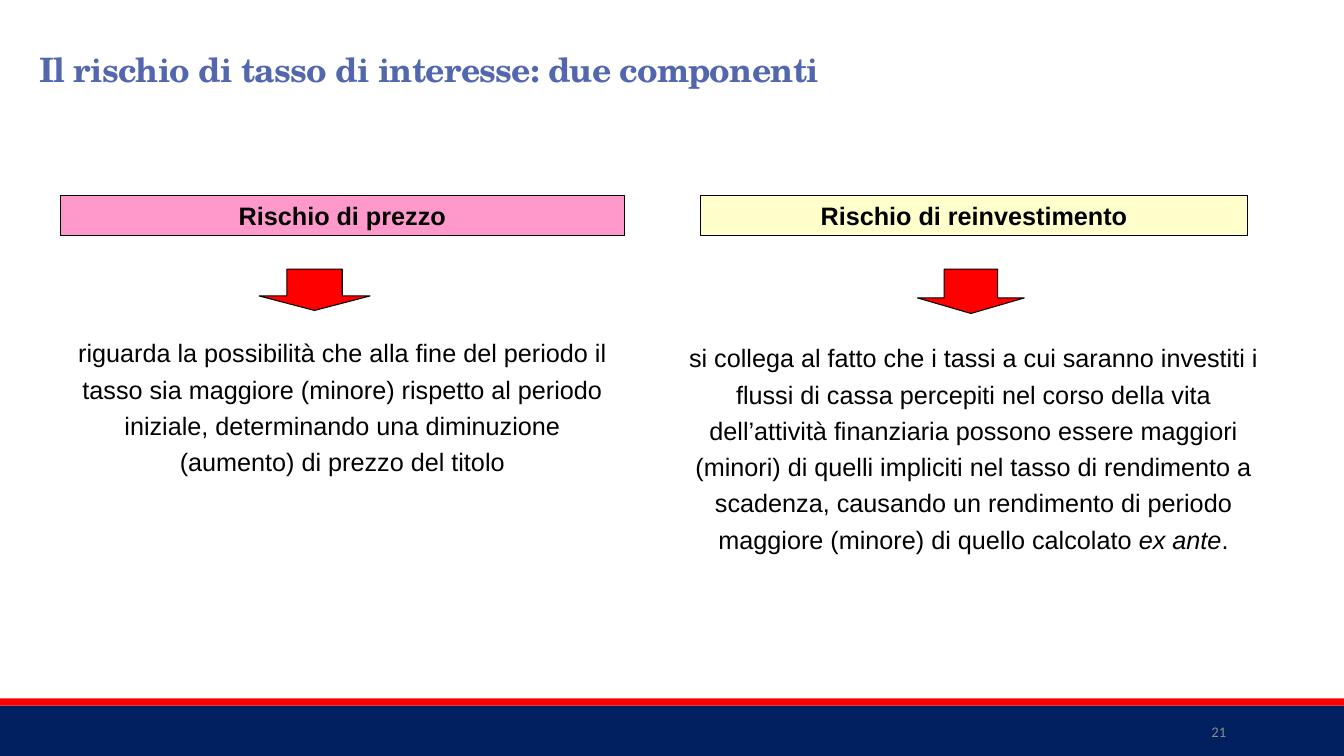
from dataclasses import dataclass

from pptx import Presentation
from pptx import util as u
from pptx.dml import color
from pptx.enum import shapes, text

COLORS = {
    "navy": "002060",
    "red": "FF0000",
    "title": "5267AE",
    "number": "8C8C8C",
    "black": "000000",
    "pink": "FF99CC",
    "cream": "FFFFCC",
}


@dataclass(frozen=True)
class Box:
    left: float
    top: float
    width: float
    height: float

    def lengths(self) -> list[u.Length]:
        return [u.Inches(value) for value in (self.left, self.top, self.width, self.height)]


@dataclass(frozen=True)
class Style:
    font: str = "Arial"
    size: float = 18
    color: str = "black"
    bold: bool = False
    align: text.PP_ALIGN = text.PP_ALIGN.CENTER
    spacing: float = 1.0
    anchor: text.MSO_ANCHOR = text.MSO_ANCHOR.TOP


@dataclass(frozen=True)
class Component:
    heading: str
    fill: str
    heading_box: Box
    arrow_box: Box
    description: str
    description_box: Box
    italic: str = ""
    ending: str = ""


TITLE = Style("TeX Gyre Schola", 24, "title", True, text.PP_ALIGN.LEFT, 0.85)
NUMBER = Style("Calibri", 10.5, "number", align=text.PP_ALIGN.RIGHT, anchor=text.MSO_ANCHOR.MIDDLE)
HEADING = Style(bold=True)
DESCRIPTION = Style(spacing=1.2)

COMPONENTS = [
    Component(
        "Rischio di prezzo",
        "pink",
        Box(0.6, 1.94, 5.59, 0.4),
        Box(2.57, 2.67, 1.1, 0.41),
        "riguarda la possibilità che alla fine del periodo il tasso sia maggiore (minore) "
        "rispetto al periodo iniziale, determinando una diminuzione (aumento) di prezzo del titolo",
        Box(0.6, 3.24, 5.59, 3.01),
    ),
    Component(
        "Rischio di reinvestimento",
        "cream",
        Box(6.95, 1.94, 5.42, 0.4),
        Box(9.1, 2.67, 1.06, 0.44),
        "si collega al fatto che i tassi a cui saranno investiti i flussi di cassa percepiti "
        "nel corso della vita dell’attività finanziaria possono essere maggiori (minori) di "
        "quelli impliciti nel tasso di rendimento a scadenza, causando un rendimento di "
        "periodo maggiore (minore) di quello calcolato ",
        Box(6.68, 3.29, 5.95, 3.01),
        "ex ante",
        ".",
    ),
]


def rgb(name: str) -> color.RGBColor:
    return color.RGBColor.from_string(COLORS[name])


def write(shape, content: str, style: Style):
    frame = shape.text_frame
    frame.word_wrap = True
    frame.vertical_anchor = style.anchor
    paragraph = frame.paragraphs[0]
    paragraph.alignment = style.align
    paragraph.line_spacing = style.spacing
    paragraph.font.name = style.font
    paragraph.font.size = u.Pt(style.size)
    paragraph.font.bold = style.bold
    paragraph.font.color.rgb = rgb(style.color)
    paragraph.add_run().text = content
    return paragraph


def add_text(slide, box: Box, content: str, style: Style):
    return write(slide.shapes.add_textbox(*box.lengths()), content, style)


def add_filled(slide, kind: shapes.MSO_SHAPE, box: Box, fill: str, outlined: bool = True):
    shape = slide.shapes.add_shape(kind, *box.lengths())
    shape.shadow.inherit = False
    shape.fill.solid()
    shape.fill.fore_color.rgb = rgb(fill)
    if outlined:
        shape.line.color.rgb = rgb("black")
        shape.line.width = u.Pt(0.75)
    else:
        shape.line.fill.background()
    return shape


def add_component(slide, component: Component) -> None:
    heading = add_filled(slide, shapes.MSO_SHAPE.RECTANGLE, component.heading_box, component.fill)
    write(heading, component.heading, HEADING)
    arrow = add_filled(slide, shapes.MSO_SHAPE.DOWN_ARROW, component.arrow_box, "red")
    arrow.adjustments[0] = 0.5
    arrow.adjustments[1] = 0.35
    paragraph = add_text(slide, component.description_box, component.description, DESCRIPTION)
    if component.italic:
        run = paragraph.add_run()
        run.text = component.italic
        run.font.italic = True
        paragraph.add_run().text = component.ending


def main() -> None:
    presentation = Presentation()
    presentation.slide_width = u.Inches(13.33)
    presentation.slide_height = u.Inches(7.5)
    slide = presentation.slides.add_slide(presentation.slide_layouts[6])

    add_filled(slide, shapes.MSO_SHAPE.RECTANGLE, Box(0, 7, 13.33, 0.5), "navy", False)
    add_filled(slide, shapes.MSO_SHAPE.RECTANGLE, Box(0, 6.93, 13.33, 0.07), "red", False)
    add_text(slide, Box(10.83, 7.06, 1.43, 0.4), "21", NUMBER)

    title = add_text(
        slide, Box(0.29, 0.5, 8.62, 0.5), "Il rischio di tasso di interesse: due componenti", TITLE
    )
    title.runs[0].font._element.set("spc", "-50")

    for component in COMPONENTS:
        add_component(slide, component)

    presentation.save("out.pptx")


if __name__ == "__main__":
    main()
